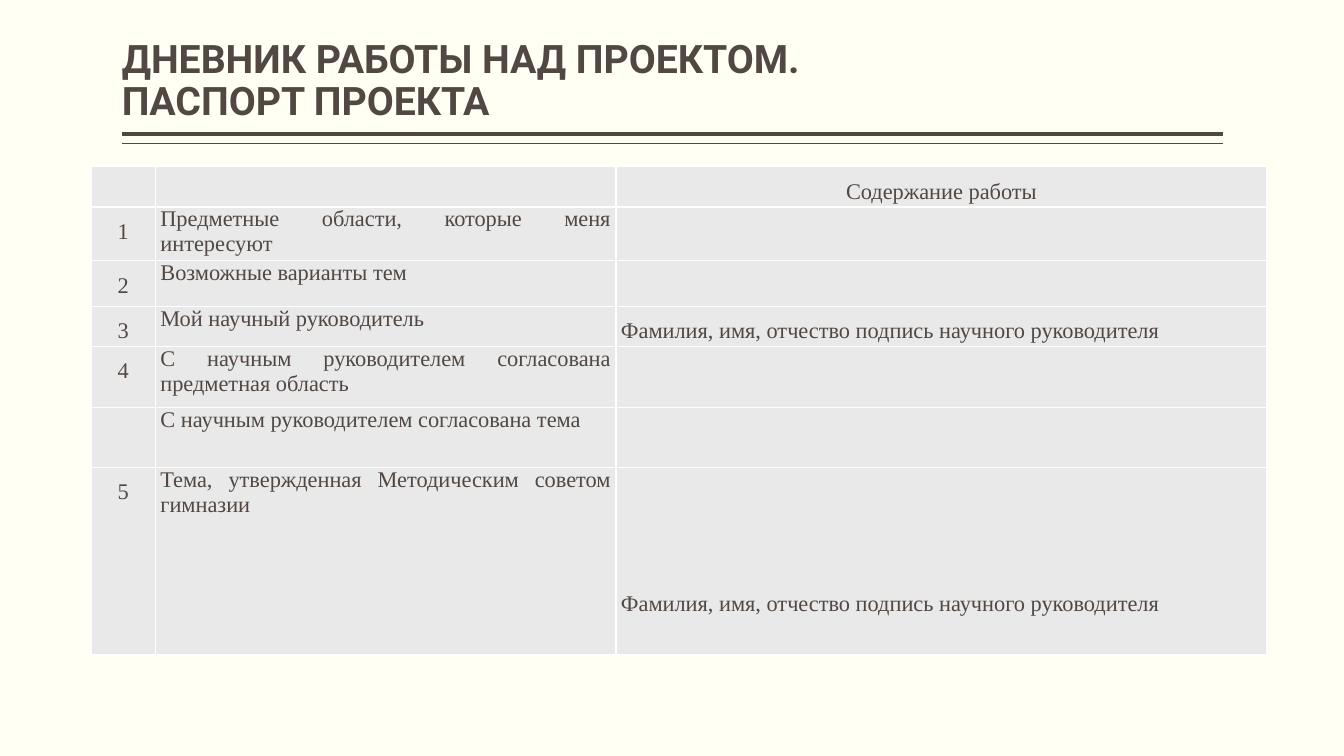
from lxml import etree
from pptx import Presentation
from pptx.dml.color import RGBColor
from pptx.enum import shapes, text
from pptx.oxml import ns
from pptx.util import Pt

COLORS = {"page": "FFFFF3", "ink": "514843", "cell": "E9E9E9", "border": "FFFFFF"}
CENTER, JUSTIFY = text.PP_ALIGN.CENTER, text.PP_ALIGN.JUSTIFY


def color(name):
    return RGBColor.from_string(COLORS[name])


class PassportSlide:
    heading_font = "Roboto"
    table_font = "Times New Roman"

    def __init__(self, deck):
        self.page = deck.slides.add_slide(deck.slide_layouts[6])
        background = self.page.background.fill
        background.solid()
        background.fore_color.rgb = color("page")

    def style_runs(self, para, font, size, bold=False):
        for span in para.runs:
            span.font.name = font
            span.font.size = Pt(size)
            span.font.bold = bold
            span.font.color.rgb = color("ink")

    def title(self, words, left, top, width, height):
        box = self.page.shapes.add_textbox(Pt(left), Pt(top), Pt(width), Pt(height))
        frame = box.text_frame
        frame.word_wrap = True
        frame.vertical_anchor = text.MSO_ANCHOR.BOTTOM
        frame.margin_left = frame.margin_right = 0
        frame.text = words
        frame.paragraphs[0].line_spacing = 0.9
        self.style_runs(frame.paragraphs[0], self.heading_font, 28, bold=True)

    def rule(self, left, right, y, weight):
        line = self.page.shapes.add_connector(
            shapes.MSO_CONNECTOR.STRAIGHT, Pt(left), Pt(y), Pt(right), Pt(y))
        line.line.color.rgb = color("ink")
        line.line.width = Pt(weight)
        etree.SubElement(line._element.spPr, ns.qn("a:effectLst"))

    def cell_borders(self, cell):
        properties = cell._tc.get_or_add_tcPr()
        for side in ("lnL", "lnR", "lnT", "lnB"):
            border = etree.SubElement(properties, ns.qn(f"a:{side}"), w=str(Pt(1)))
            fill = etree.SubElement(border, ns.qn("a:solidFill"))
            etree.SubElement(fill, ns.qn("a:srgbClr"), val=COLORS["border"])

    def cell(self, cell, words, align, spacing):
        self.cell_borders(cell)
        cell.fill.solid()
        cell.fill.fore_color.rgb = color("cell")
        cell.margin_left = cell.margin_right = Pt(3.6)
        cell.margin_top = cell.margin_bottom = 0
        cell.text = words
        para = cell.text_frame.paragraphs[0]
        para.alignment = align
        para.line_spacing = spacing
        para.font.size = Pt(16)
        self.style_runs(para, self.table_font, 16)

    def table(self, rows, left, top, widths, heights):
        table = self.page.shapes.add_table(
            len(rows), len(widths), Pt(left), Pt(top),
            Pt(sum(widths)), Pt(sum(heights))).table
        table.first_row = table.horz_banding = False
        for column, width in zip(table.columns, widths):
            column.width = Pt(width)
        for row, height in zip(table.rows, heights):
            row.height = Pt(height)
        for r, row in enumerate(rows):
            for c, words in enumerate(row):
                align = CENTER if c == 0 or r == 0 else JUSTIFY
                self.cell(table.cell(r, c), words, align, 1 if c == 1 else 1.5)
        return table


def main():
    deck = Presentation()
    deck.slide_width, deck.slide_height = Pt(960), Pt(540)
    slide = PassportSlide(deck)

    # Heading with a double rule
    slide.rule(87, 873.5, 95.75, 3)
    slide.rule(87, 873.5, 102.5, 1)
    slide.title("ДНЕВНИК РАБОТЫ НАД ПРОЕКТОМ. \vПАСПОРТ ПРОЕКТА", 87, 5.75, 786.5, 86.5)

    # Project passport
    signature = "Фамилия, имя, отчество подпись научного руководителя"
    rows = [
        ("", "", "Содержание работы"),
        ("1", "Предметные области, которые меня интересуют", ""),
        ("2", "Возможные варианты тем", ""),
        ("3", "Мой научный руководитель", signature),
        ("4", "С научным руководителем согласована предметная область", ""),
        ("", "С научным руководителем согласована тема", ""),
        ("5", "Тема, утвержденная Методическим советом гимназии", signature),
    ]
    table = slide.table(rows, 65, 119, (46, 329, 465), (26, 35.5, 32.5, 27, 43.5, 43, 133.5))

    # The last signature sits one line above the bottom edge
    last_signature = table.cell(len(rows) - 1, 2)
    last_signature.vertical_anchor = text.MSO_ANCHOR.BOTTOM
    last_signature.margin_bottom = Pt(27)

    deck.save("out.pptx")


if __name__ == "__main__":
    main()
